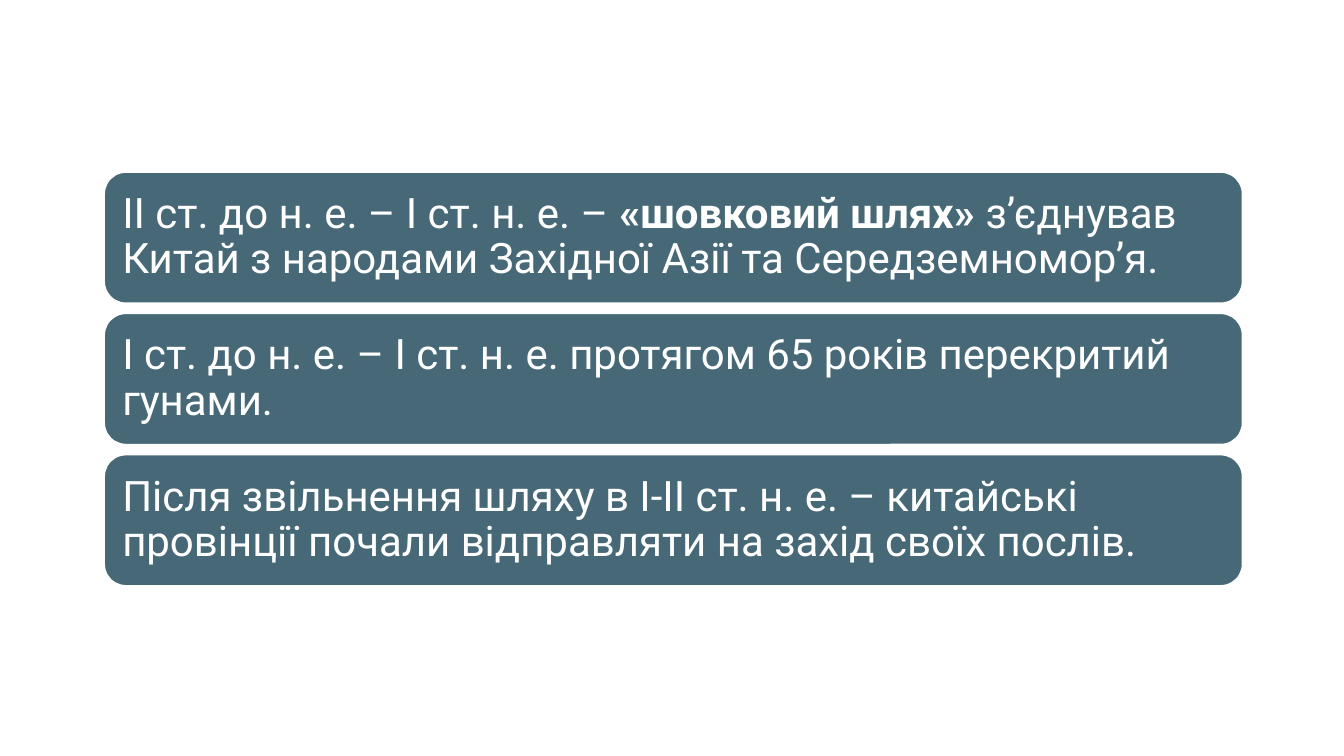
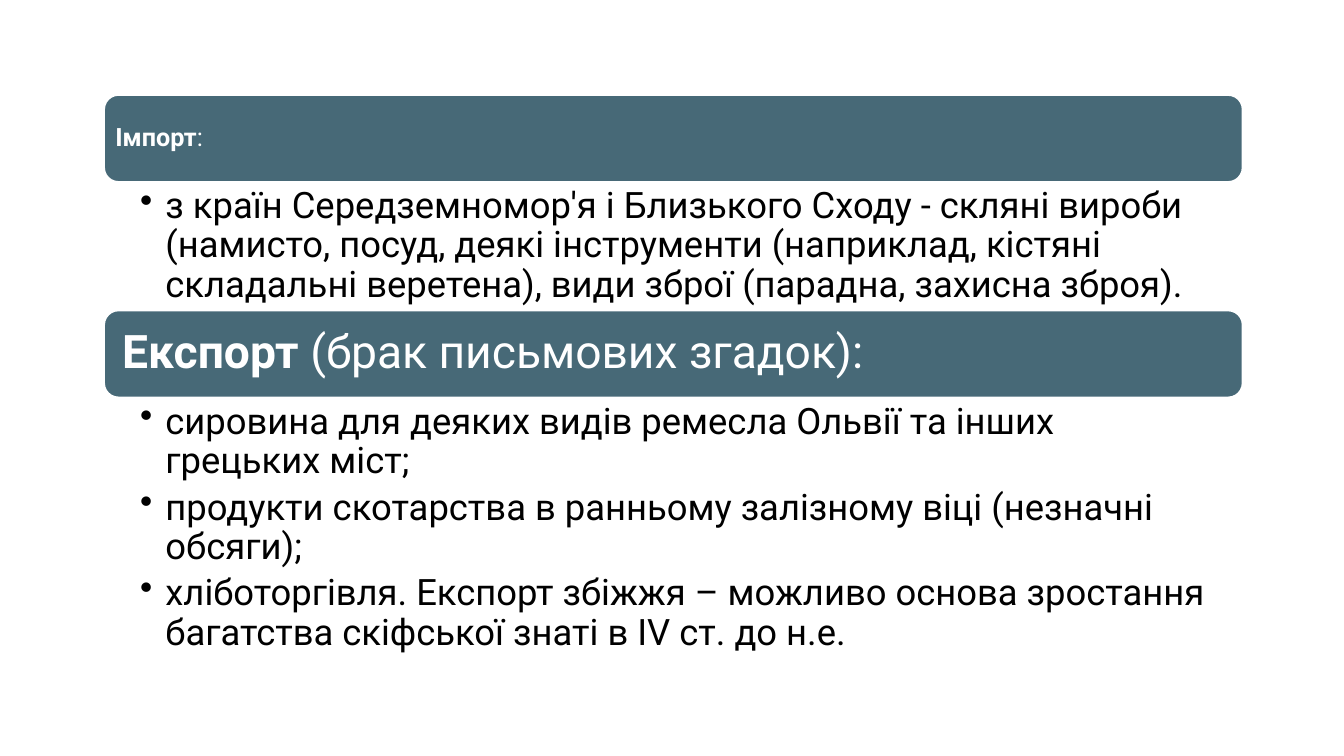
from lxml.etree import SubElement
from pptx import Presentation
from pptx.dml.color import RGBColor
from pptx.enum.shapes import MSO_SHAPE as Preset
from pptx.enum.text import MSO_ANCHOR as Anchor, PP_ALIGN as Align
from pptx.oxml.ns import qn
from pptx.util import Cm, Pt


def color(value):
    return RGBColor.from_string(value)


class Deck:
    FONT = "Roboto"
    TEAL, WHITE, BLACK = "476977", "FFFFFF", "000000"
    LEFT, WIDTH = 2.62, 28.7
    INDENT = 0.64

    def __init__(self):
        self.presentation = Presentation()
        self.presentation.slide_width = Cm(33.87)
        self.presentation.slide_height = Cm(19.05)
        self.slide = None

    def add_slide(self):
        blank = self.presentation.slide_layouts[6]
        self.slide = self.presentation.slides.add_slide(blank)

    def set_margins(self, frame, left, top, right, bottom):
        frame.word_wrap = True
        frame.margin_left, frame.margin_top = Cm(left), Cm(top)
        frame.margin_right, frame.margin_bottom = Cm(right), Cm(bottom)

    def style(self, paragraph, size, text_color):
        paragraph.alignment = Align.LEFT
        paragraph.line_spacing = 0.9
        paragraph.font.name = self.FONT
        paragraph.font.size = Pt(size)
        paragraph.font.color.rgb = color(text_color)

    def bar(self, top, height, runs, size, inset):
        bar = self.slide.shapes.add_shape(
            Preset.ROUNDED_RECTANGLE, Cm(self.LEFT), Cm(top), Cm(self.WIDTH), Cm(height))
        bar.shadow.inherit = False
        bar.fill.solid()
        bar.fill.fore_color.rgb = color(self.TEAL)
        bar.line.color.rgb = color(self.WHITE)
        bar.line.width = Pt(1.5)
        frame = bar.text_frame
        self.set_margins(frame, inset, inset, inset, inset)
        frame.vertical_anchor = Anchor.MIDDLE
        paragraph = frame.paragraphs[0]
        self.style(paragraph, size, self.WHITE)
        for text, bold in runs:
            run = paragraph.add_run()
            run.text = text
            run.font.bold = bold

    def bullets(self, top, height, items, size=26):
        box = self.slide.shapes.add_textbox(
            Cm(self.LEFT), Cm(top), Cm(self.WIDTH), Cm(height))
        frame = box.text_frame
        self.set_margins(frame, 0.91, 0.13, 0.66, 0.13)
        for index, item in enumerate(items):
            paragraph = frame.add_paragraph() if index else frame.paragraphs[0]
            paragraph.text = item
            properties = paragraph._p.get_or_add_pPr()
            properties.set("marL", str(Cm(self.INDENT)))
            properties.set("indent", str(-Cm(self.INDENT)))
            SubElement(properties, qn("a:buChar"), char="•")
            self.style(paragraph, size, self.BLACK)
            paragraph.space_after = Pt(size * 0.2)


def silk_road(deck):
    deck.add_slide()
    periods = [
        [("ІІ ст. до н. е. – І ст. н. е. – ", False),
         ("«шовковий шлях» ", True),
         ("з’єднував Китай з народами Західної Азії та Середземномор’я.", False)],
        [("І ст. до н. е. – І ст. н. е. протягом 65 років перекритий гунами.", False)],
        [("Після звільнення шляху в І-ІІ ст. н. е. – китайські провінції почали "
          "відправляти на захід своїх послів.", False)],
    ]
    for index, runs in enumerate(periods):
        deck.bar(4.33 + index * 3.56, 3.32, runs, size=30, inset=0.3)


def trade(deck):
    deck.add_slide()
    sections = [
        ([("Імпорт", True), (":", False)], 18, 0.18, 3.23,
         ["з країн Середземномор'я і Близького Сходу - скляні вироби (намисто, посуд, "
          "деякі інструменти (наприклад, кістяні складальні веретена), види зброї "
          "(парадна, захисна зброя)."]),
        ([("Експорт ", True), ("(брак письмових згадок):", False)], 33, 0.35, 6.63,
         ["сировина для деяких видів ремесла Ольвії та інших грецьких міст;",
          "продукти скотарства в ранньому залізному віці (незначні обсяги);",
          "хліботоргівля. Експорт збіжжя – можливо основа зростання багатства "
          "скіфської знаті в IV ст. до н.е."]),
    ]
    top, bar_height = 2.39, 2.2
    for heading, size, inset, list_height, goods in sections:
        deck.bar(top, bar_height, heading, size, inset)
        deck.bullets(top + bar_height, list_height, goods)
        top += bar_height + list_height


def main():
    deck = Deck()
    silk_road(deck)
    trade(deck)
    deck.presentation.save("out.pptx")


if __name__ == "__main__":
    main()
